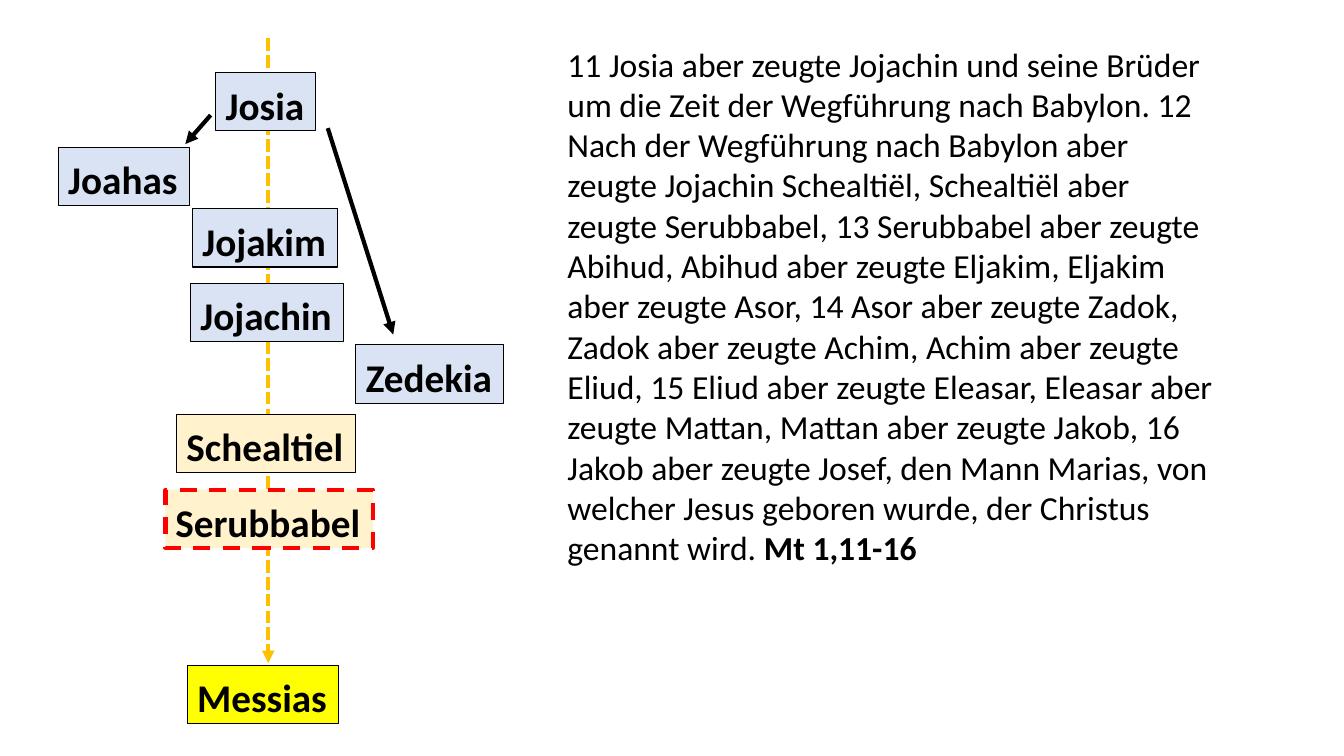
from dataclasses import dataclass
from typing import NamedTuple

from lxml.etree import SubElement
from pptx import Presentation
from pptx.dml.color import RGBColor as Rgb
from pptx.enum.dml import MSO_LINE_DASH_STYLE as Dash
from pptx.enum.shapes import MSO_CONNECTOR_TYPE as Connector
from pptx.enum.text import MSO_AUTO_SIZE as AutoSize
from pptx.oxml.ns import qn
from pptx.util import Cm, Pt


@dataclass(frozen=True)
class Theme:
    """Colours, font and sizes of the slide."""
    font: str = "Calibri"
    name_size: int = 28
    verse_size: int = 24
    ink: str = "000000"
    king: str = "DAE3F3"
    exile: str = "FFF2CC"
    messiah: str = "FFFF00"
    descent: str = "FFC000"
    highlight: str = "FF0000"
    thin: float = 0.75
    thick: float = 3


class Box(NamedTuple):
    """A region of the slide, in centimetres."""
    left: float
    top: float
    width: float
    height: float


THEME = Theme()
NAME_HEIGHT = 1.47

ANCESTORS = [
    ("Josia", 3.97, 0.86, 2.51, THEME.king),
    ("Jojakim", 3.38, 4.29, 3.66, THEME.king),
    ("Jojachin", 3.33, 6.17, 3.86, THEME.king),
    ("Schealtiel", 2.98, 9.47, 4.52, THEME.exile),
    ("Serubbabel", 2.7, 11.37, 5.23, THEME.exile),
    ("Joahas", 0, 2.74, 3.3, THEME.king),
    ("Zedekia", 7.5, 7.72, 3.73, THEME.king),
    ("Messias", 3.25, 15.79, 3.81, THEME.messiah),
]
HIGHLIGHTED = "Serubbabel"
BROTHER_ARROWS = [
    ((3.84, 1.93), (3.2, 2.66)),
    ((6.79, 2.26), (8.44, 7.46)),
]
DESCENT_ARROW = ((5.29, 0), (5.29, 15.74))

VERSES = (
    "11 Josia aber zeugte Jojachin und seine Brüder um die Zeit der "
    "Wegführung nach Babylon. 12 Nach der Wegführung nach Babylon aber "
    "zeugte Jojachin Schealtiël, Schealtiël aber zeugte Serubbabel, "
    "13 Serubbabel aber zeugte Abihud, Abihud aber zeugte Eljakim, Eljakim "
    "aber zeugte Asor, 14 Asor aber zeugte Zadok, Zadok aber zeugte Achim, "
    "Achim aber zeugte Eliud, 15 Eliud aber zeugte Eleasar, Eleasar aber "
    "zeugte Mattan, Mattan aber zeugte Jakob, 16 Jakob aber zeugte Josef, "
    "den Mann Marias, von welcher Jesus geboren wurde, der Christus "
    "genannt wird. "
)
REFERENCE = "Mt 1,11-16"


def add_span(para, text, size, bold=False):
    """Add one styled run to a paragraph."""
    span = para.add_run()
    span.text = text
    span.font.name = THEME.font
    span.font.size = Pt(size)
    span.font.bold = bold
    span.font.color.rgb = Rgb.from_string(THEME.ink)


def add_text_frame(page, box, wrap):
    """Add a text box that grows with its text."""
    shape = page.shapes.add_textbox(*map(Cm, box))
    shape.text_frame.word_wrap = wrap
    shape.text_frame.auto_size = AutoSize.SHAPE_TO_FIT_TEXT
    return shape


def style_line(line, color, width, dash=None):
    """Set the colour, width and dash of a line."""
    line.color.rgb = Rgb.from_string(color)
    line.width = Pt(width)
    if dash is not None:
        line.dash_style = dash


def add_arrow(page, box, ends, color, dash=None):
    """Draw an arrow between two points relative to the box."""
    points = [Cm(start + step) for end in ends
              for start, step in zip((box.left, box.top), end)]
    arrow = page.shapes.add_connector(Connector.STRAIGHT, *points)
    style_line(arrow.line, color, THEME.thick, dash)
    properties = arrow._element.spPr
    SubElement(properties.find(qn("a:ln")), qn("a:tailEnd"), type="triangle")
    SubElement(properties, qn("a:effectLst"))


def add_name(page, box, name, fill):
    """Draw one ancestor's name in a framed box."""
    shape = add_text_frame(page, box, wrap=False)
    shape.fill.solid()
    shape.fill.fore_color.rgb = Rgb.from_string(fill)
    if name == HIGHLIGHTED:
        style_line(shape.line, THEME.highlight, THEME.thick, Dash.DASH)
    else:
        style_line(shape.line, THEME.ink, THEME.thin)
    para = shape.text_frame.paragraphs[0]
    para.line_spacing = 1.07
    para.space_before = Pt(2)
    add_span(para, name, THEME.name_size, bold=True)


def add_family_tree(page, box):
    """Place the line of descent, the names and the arrows to brothers."""
    add_arrow(page, box, DESCENT_ARROW, THEME.descent, Dash.SQUARE_DOT)
    for name, left, top, width, fill in ANCESTORS:
        place = Box(box.left + left, box.top + top, width, NAME_HEIGHT)
        add_name(page, place, name, fill)
    for ends in BROTHER_ARROWS:
        add_arrow(page, box, ends, THEME.ink)


def add_scripture(page, box):
    """Place the Bible passage with its reference."""
    para = add_text_frame(page, box, wrap=True).text_frame.paragraphs[0]
    add_span(para, VERSES, THEME.verse_size)
    add_span(para, REFERENCE, THEME.verse_size, bold=True)


def main():
    """Build and save the deck."""
    deck = Presentation()
    deck.slide_width, deck.slide_height = Cm(33.87), Cm(19.05)
    page = deck.slides.add_slide(deck.slide_layouts[6])
    add_family_tree(page, Box(1.47, 0.97, 11.23, 17.26))
    add_scripture(page, Box(14.05, 0.97, 16.94, 13.59))
    deck.save("out.pptx")


if __name__ == "__main__":
    main()
